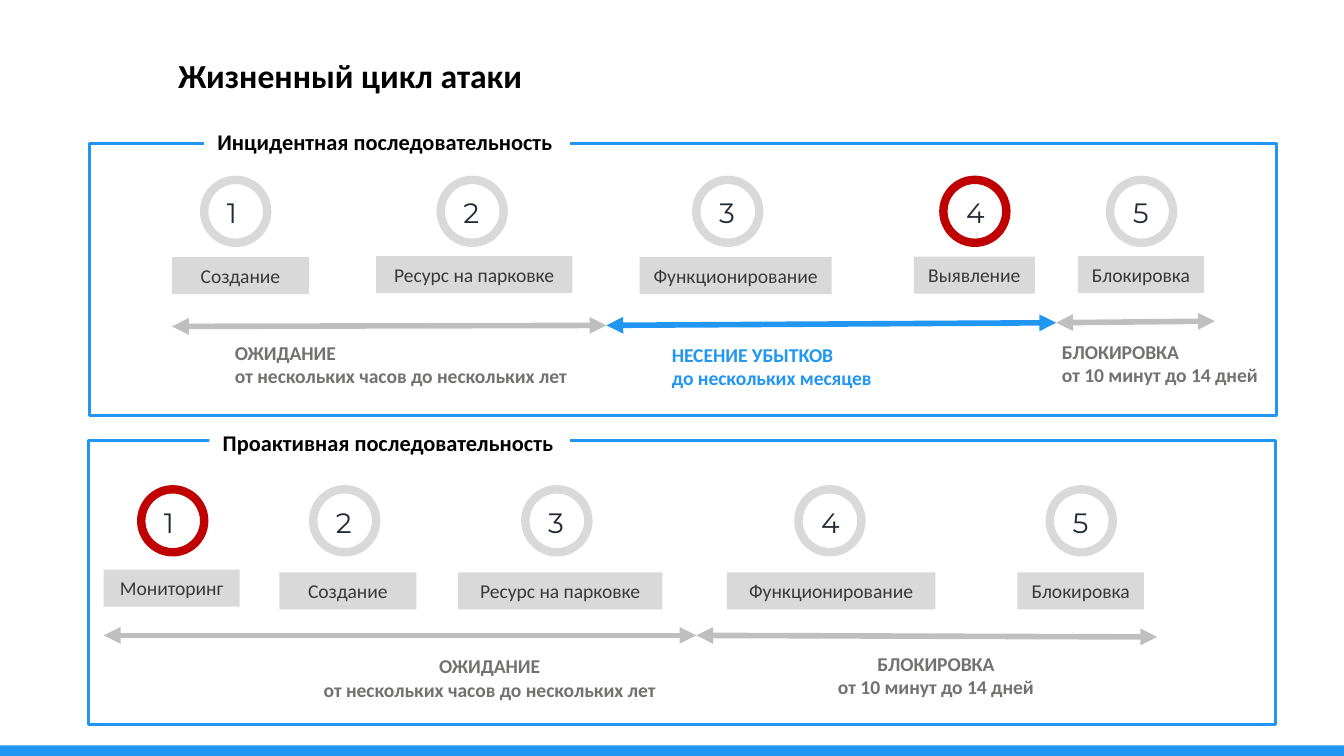
from dataclasses import dataclass

from lxml import etree
from pptx import Presentation
from pptx.dml.color import RGBColor
from pptx.enum.shapes import MSO_CONNECTOR, MSO_SHAPE
from pptx.enum.text import MSO_ANCHOR, PP_ALIGN
from pptx.oxml.ns import qn
from pptx.util import Cm, Pt

RECTANGLE, OVAL = MSO_SHAPE.RECTANGLE, MSO_SHAPE.OVAL
STRAIGHT = MSO_CONNECTOR.STRAIGHT
TOP, MIDDLE = MSO_ANCHOR.TOP, MSO_ANCHOR.MIDDLE
LEFT, CENTER = PP_ALIGN.LEFT, PP_ALIGN.CENTER
BLUE, RED, WHITE, BLACK = "2196F3", "C00000", "FFFFFF", "000000"
LIGHT_GRAY, ARROW_GRAY, NOTE_GRAY = "D9D9D9", "BFBFBF", "767171"
LABEL_TEXT, NUMBER_TEXT = "3B3838", "222A35"
CIRCLE_SIZE = 1.19
WAITING = "ОЖИДАНИЕ\nот нескольких часов до нескольких лет"
LOSSES = "НЕСЕНИЕ УБЫТКОВ\nдо нескольких месяцев"
BLOCKING = "БЛОКИРОВКА\nот 10 минут до 14 дней"


@dataclass
class Box:
    """Position and size in centimetres."""
    left: float
    top: float
    width: float
    height: float

    def lengths(self):
        return Cm(self.left), Cm(self.top), Cm(self.width), Cm(self.height)


@dataclass
class Step:
    label: str
    circle_left: float
    label_left: float
    label_width: float
    label_top: float
    ring_color: str = LIGHT_GRAY


@dataclass
class Phase:
    text: str
    note: Box
    end: tuple[float, float]
    arrow_color: str = ARROW_GRAY
    text_color: str = NOTE_GRAY


@dataclass
class Sequence:
    caption: str
    frame: Box
    caption_box: Box
    circle_top: float
    steps: list[Step]
    arrow_start: tuple[float, float]
    phases: list[Phase]
    note_alignment: PP_ALIGN


SEQUENCES = [
    Sequence(
        "Инцидентная последовательность",
        Box(1.7, 2.72, 22.43, 5.13), Box(3.86, 2.29, 6.91, 0.76), 3.4,
        [Step("Создание", 3.86, 3.25, 2.59, 4.86),
         Step("Ресурс на парковке", 8.33, 7.11, 3.71, 4.84),
         Step("Функционирование", 13.16, 12.09, 3.63, 4.86),
         Step("Выявление", 17.83, 17.27, 2.29, 4.85, RED),
         Step("Блокировка", 20.98, 20.37, 2.39, 4.84)],
        (3.25, 6.17),
        [Phase(WAITING, Box(4.19, 6.32, 6.83, 1.14), (11.46, 6.15)),
         Phase(LOSSES, Box(12.45, 6.35, 5.13, 1.14), (19.96, 6.1), BLUE, BLUE),
         Phase(BLOCKING, Box(19.82, 6.3, 4.3, 1.14), (22.96, 6.07))],
        LEFT),
    Sequence(
        "Проактивная последовательность",
        Box(1.68, 8.33, 22.43, 5.36), Box(3.96, 7.98, 6.81, 0.76), 9.25,
        [Step("Мониторинг", 2.67, 1.96, 2.57, 10.77, RED),
         Step("Создание", 5.92, 5.28, 2.59, 10.82),
         Step("Ресурс на парковке", 9.93, 8.66, 3.86, 10.82),
         Step("Функционирование", 15.09, 13.74, 3.94, 10.82),
         Step("Блокировка", 19.84, 19.23, 2.39, 10.82)],
        (1.96, 12.01),
        [Phase(WAITING, Box(5.28, 12.24, 7.95, 1.14), (13.16, 12.01)),
         Phase(BLOCKING, Box(14.78, 12.19, 5.82, 1.14), (21.87, 12.04))],
        CENTER),
]


def rgb(color: str) -> RGBColor:
    return RGBColor.from_string(color)


def add_shape(slide, kind, box: Box, fill: str = "", line: str = "", line_width: float = 0):
    shape = slide.shapes.add_shape(kind, *box.lengths())
    shape.shadow.inherit = False
    if fill:
        shape.fill.solid()
        shape.fill.fore_color.rgb = rgb(fill)
    else:
        shape.fill.background()
    if line:
        shape.line.color.rgb = rgb(line)
        shape.line.width = Pt(line_width)
    else:
        shape.line.fill.background()
    return shape


def write_text(shape, text: str, size: float, color: str, *, font="Calibri", bold=False,
               alignment=LEFT, anchor=TOP, wrap=True) -> None:
    frame = shape.text_frame
    frame.text = text
    frame.word_wrap = wrap
    frame.vertical_anchor = anchor
    for paragraph in frame.paragraphs:
        paragraph.alignment = alignment
        for run in paragraph.runs:
            run.font.name = font
            run.font.size = Pt(size)
            run.font.bold = bold
            run.font.color.rgb = rgb(color)


def add_double_arrow(slide, start: tuple[float, float], end: tuple[float, float],
                     color: str) -> None:
    points = [Cm(value) for value in (*start, *end)]
    connector = slide.shapes.add_connector(STRAIGHT, *points)
    connector.line.color.rgb = rgb(color)
    connector.line.width = Pt(3)
    line = connector.line._get_or_add_ln()
    for tag in ("a:headEnd", "a:tailEnd"):
        etree.SubElement(line, qn(tag), type="triangle")
    etree.SubElement(connector._element.spPr, qn("a:effectLst"))


def add_step(slide, number: int, step: Step, circle_top: float) -> None:
    label = add_shape(slide, RECTANGLE,
                      Box(step.label_left, step.label_top, step.label_width, 0.7), LIGHT_GRAY)
    write_text(label, step.label, 10.5, LABEL_TEXT, alignment=CENTER, wrap=False)
    add_shape(slide, OVAL, Box(step.circle_left, circle_top, CIRCLE_SIZE, CIRCLE_SIZE),
              line=step.ring_color, line_width=4.5)
    number_box = Box(step.circle_left + 0.18, circle_top + 0.17, 0.81, 0.89)
    write_text(slide.shapes.add_textbox(*number_box.lengths()), str(number), 15,
               NUMBER_TEXT, font="Montserrat", anchor=MIDDLE)


def add_sequence(slide, sequence: Sequence) -> None:
    add_shape(slide, RECTANGLE, sequence.frame, line=BLUE, line_width=1.5)
    caption = add_shape(slide, RECTANGLE, sequence.caption_box, WHITE)
    write_text(caption, sequence.caption, 12, BLACK, bold=True)
    for number, step in enumerate(sequence.steps, start=1):
        add_step(slide, number, step, sequence.circle_top)
    start = sequence.arrow_start
    for phase in sequence.phases:
        add_double_arrow(slide, start, phase.end, phase.arrow_color)
        write_text(slide.shapes.add_textbox(*phase.note.lengths()), phase.text, 10.5,
                   phase.text_color, bold=True, alignment=sequence.note_alignment)
        start = phase.end


def add_title(slide, text: str) -> None:
    title = slide.shapes.title
    title.left, title.top, title.width, title.height = Box(3.18, 0.76, 16.55, 1.42).lengths()
    write_text(title, text, 18, BLACK, bold=True, anchor=MIDDLE)
    frame = title.text_frame
    frame.margin_left = frame.margin_right = Cm(0.19)
    frame.margin_top = frame.margin_bottom = Cm(0.1)
    frame.paragraphs[0].line_spacing = 0.9


def main() -> None:
    presentation = Presentation()
    presentation.slide_width, presentation.slide_height = Cm(25.4), Cm(14.29)
    slide = presentation.slides.add_slide(presentation.slide_layouts[5])
    add_shape(slide, RECTANGLE, Box(0, 14.09, 25.4, 0.2), BLUE)
    add_title(slide, "Жизненный цикл атаки")
    for sequence in SEQUENCES:
        add_sequence(slide, sequence)
    presentation.save("out.pptx")


if __name__ == "__main__":
    main()
